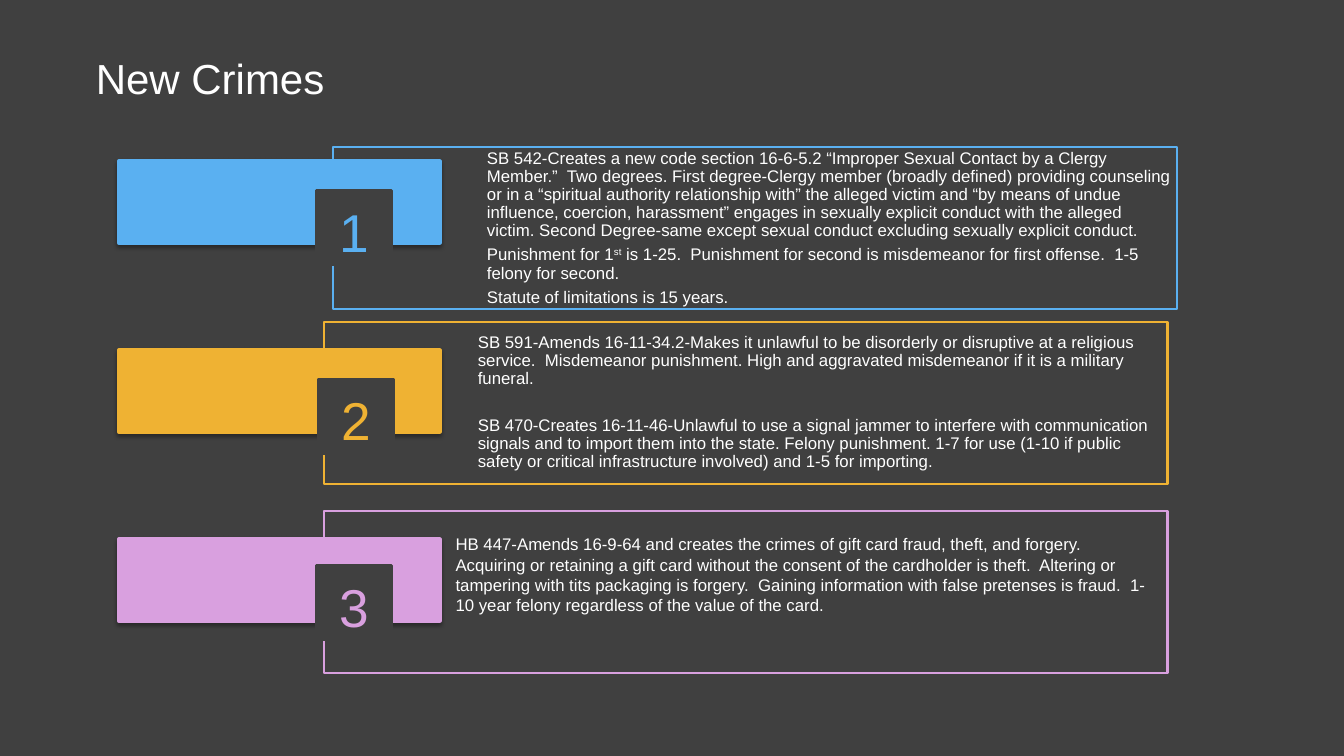
import pptx
import pptx.util
import pptx.dml.color
import pptx.enum.shapes
import pptx.enum.text
import pptx.oxml
import pptx.oxml.ns

Inches, Pt = pptx.util.Inches, pptx.util.Pt
MIDDLE = pptx.enum.text.MSO_ANCHOR.MIDDLE
ALIGN = pptx.enum.text.PP_ALIGN
DARK, WHITE = "404040", "FFFFFF"

# Content: a paragraph is a list of runs; "st" is raised
TITLE = "New Crimes"
CLERGY = [
    ["SB 542-Creates a new code section 16-6-5.2 “Improper Sexual Contact by a "
     "Clergy Member.”  Two degrees. First degree-Clergy member (broadly defined) "
     "providing counseling or in a “spiritual authority relationship with” the "
     "alleged victim and “by means of undue influence, coercion, harassment” "
     "engages in sexually explicit conduct with the alleged victim. Second "
     "Degree-same except sexual conduct excluding sexually explicit conduct."],
    ["Punishment for 1", "st", " is 1-25.  Punishment for second is misdemeanor "
     "for first offense.  1-5 felony for second."],
    ["Statute of limitations is 15 years."],
]
PUBLIC = [
    ["SB 591-Amends 16-11-34.2-Makes it unlawful to be disorderly or disruptive "
     "at a religious service.  Misdemeanor punishment. High and aggravated "
     "misdemeanor if it is a military funeral."],
    ["SB 470-Creates 16-11-46-Unlawful to use a signal jammer to interfere with "
     "communication signals and to import them into the state. Felony "
     "punishment. 1-7 for use (1-10 if public safety or critical infrastructure "
     "involved) and 1-5 for importing."],
]
CARDS = [
    ["HB 447-Amends 16-9-64 and creates the crimes of gift card fraud, theft, and "
     "forgery. Acquiring or retaining a gift card without the consent of the "
     "cardholder is theft.  Altering or tampering with tits packaging is "
     "forgery.  Gaining information with false pretenses is fraud.  1-10 year "
     "felony regardless of the value of the card."],
]
# Colour, frame corner, number corner, framed text, gap after paragraphs
ROWS = [
    ("5AB0F1", (3.3, 1.46), (3.14, 1.89), CLERGY, 4.2),
    ("EFB233", (3.21, 3.19), (3.16, 3.76), PUBLIC, 20.6),
    ("D9A0DF", (3.21, 5.07), (3.14, 5.61), [], 0),
]
BAR_TOP, BAR_STEP = 1.6, 1.875

SHADE = (
    '<a:effectLst xmlns:a="http://schemas.openxmlformats.org/drawingml/2006/main">'
    '<a:outerShdw blurRad="39370" dist="20320" dir="5400000" rotWithShape="0">'
    '<a:srgbClr val="000000"><a:alpha val="38000"/></a:srgbClr>'
    '</a:outerShdw></a:effectLst>'
)


def paint(hue):
    return pptx.dml.color.RGBColor.from_string(hue)


def style(para, size, hue):
    for run in para.runs:
        run.font.name = "Arial"
        run.font.size = Pt(size)
        run.font.color.rgb = paint(hue)


def add_box(left, top, width, height, line, weight, fill=None):
    box = slide.shapes.add_shape(
        pptx.enum.shapes.MSO_SHAPE.RECTANGLE,
        Inches(left), Inches(top), Inches(width), Inches(height))
    box.shadow.inherit = False
    if fill:
        box.fill.solid()
        box.fill.fore_color.rgb = paint(fill)
    else:
        box.fill.background()
    box.line.color.rgb = paint(line)
    box.line.width = Pt(weight)
    return box


def set_pad(frame, left, top, right, bottom):
    frame.margin_left, frame.margin_top = Inches(left), Inches(top)
    frame.margin_right, frame.margin_bottom = Inches(right), Inches(bottom)
    frame.word_wrap = True


def write(frame, paras, gap=0, ratio=None):
    for i, runs in enumerate(paras):
        para = frame.paragraphs[0] if i == 0 else frame.add_paragraph()
        para.alignment = ALIGN.LEFT
        para.line_spacing = ratio
        para.space_after = Pt(gap)
        for text in runs:
            run = para.add_run()
            run.text = text
            if text == "st":
                run.font._element.set("baseline", "30000")
        style(para, 12, WHITE)


deck = pptx.Presentation()
deck.slide_width, deck.slide_height = Inches(13.33), Inches(7.5)
slide = deck.slides.add_slide(deck.slide_layouts[5])
slide.background.fill.solid()
slide.background.fill.fore_color.rgb = paint(DARK)

# Title
head = slide.shapes.title
head.left, head.top = Inches(0.85), Inches(0.31)
head.width, head.height = Inches(11.63), Inches(0.99)
head.text_frame.text = TITLE
head.text_frame.vertical_anchor = MIDDLE
set_pad(head.text_frame, 0.1, 0.05, 0.1, 0.05)
para = head.text_frame.paragraphs[0]
para.alignment = ALIGN.LEFT
para.line_spacing = 0.9
style(para, 30, WHITE)

for i, (hue, corner, spot, paras, gap) in enumerate(ROWS):
    # Outlined frame with its text
    frame = add_box(*corner, 8.37, 1.61, hue, 1.5).text_frame
    frame.vertical_anchor = MIDDLE
    set_pad(frame, 1.53, 0.05, 0.05, 0.05)
    write(frame, paras, gap, 0.9)

    # Solid bar with a soft shadow
    bar = add_box(1.18, BAR_TOP + i * BAR_STEP, 3.18, 0.81, hue, 3, hue)
    props = bar._element.spPr
    props.remove(props.find(pptx.oxml.ns.qn("a:effectLst")))
    props.append(pptx.oxml.parse_xml(SHADE))

    # Number tile
    tile = add_box(*spot, 0.74, 0.74, DARK, 2, DARK).text_frame
    tile.text = str(i + 1)
    tile.vertical_anchor = MIDDLE
    set_pad(tile, 0, 0.06, 0, 0)
    tile.paragraphs[0].alignment = ALIGN.CENTER
    style(tile.paragraphs[0], 38, hue)

# Text over the third frame
note = slide.shapes.add_textbox(Inches(4.42), Inches(5.25), Inches(7.07), Inches(0.91))
set_pad(note.text_frame, 0.1, 0.05, 0.1, 0.05)
write(note.text_frame, CARDS)

deck.save("out.pptx")
